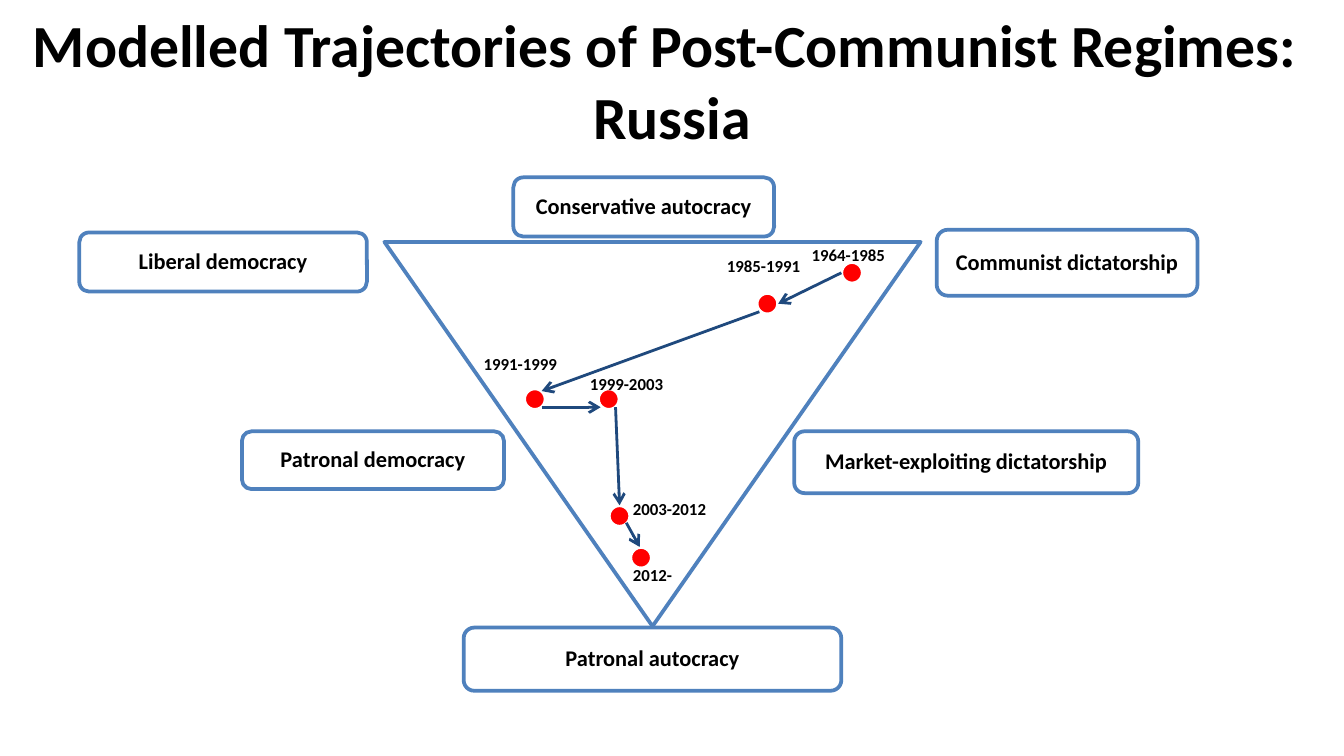
from lxml.etree import SubElement
from pptx import Presentation
from pptx.dml.color import RGBColor
from pptx.enum.shapes import MSO_CONNECTOR, MSO_SHAPE
from pptx.enum.text import MSO_ANCHOR, MSO_AUTO_SIZE, PP_ALIGN
from pptx.oxml.ns import qn
from pptx.util import Inches, Pt

BLACK = RGBColor(0x00, 0x00, 0x00)
WHITE = RGBColor(0xFF, 0xFF, 0xFF)
BLUE = RGBColor(0x4F, 0x81, 0xBD)
NAVY = RGBColor(0x1F, 0x49, 0x7D)
RED = RGBColor(0xFF, 0x00, 0x00)

BOXES = [
    ("Communist dictatorship", 6.97, 1.71, 1.94, 0.49),
    ("Liberal democracy", 0.59, 1.73, 2.14, 0.44),
    ("Patronal autocracy", 3.45, 4.67, 2.81, 0.47),
    ("Conservative autocracy", 3.82, 1.32, 1.94, 0.44),
    ("Market-exploiting dictatorship", 5.91, 3.21, 2.56, 0.46),
    ("Patronal democracy", 1.8, 3.21, 1.95, 0.43),
]
STAGES = [
    ("1964-1985", (6.26, 1.95), (5.94, 1.77)),
    ("1985-1991", (5.63, 2.18), (5.31, 1.85)),
    ("1991-1999", (3.9, 2.89), (3.5, 2.58)),
    ("1999-2003", (4.45, 2.89), (4.29, 2.73)),
    ("2003-2012", (4.53, 3.76), (4.61, 3.66)),
    ("2012-", (4.69, 4.07), (4.61, 4.15)),
]
ARROWS = [
    ((6.26, 2.03), (5.79, 2.26)),
    ((5.65, 2.32), (4.03, 2.91)),
    ((4.03, 3.03), (4.47, 3.03)),
    ((4.58, 3.03), (4.61, 3.76)),
    ((4.66, 3.89), (4.76, 4.07)),
]


def write(frame, text, size=12, align=PP_ALIGN.CENTER, anchor=MSO_ANCHOR.MIDDLE,
          inset=None, space=None, font="Calibri", color=BLACK):
    frame.word_wrap = True
    frame.auto_size = MSO_AUTO_SIZE.NONE
    frame.vertical_anchor = anchor
    if inset is not None:
        frame.margin_left = frame.margin_right = Inches(inset)
        frame.margin_top = frame.margin_bottom = Inches(inset)
    para = frame.paragraphs[0]
    para.text = text
    para.alignment = align
    para.line_spacing = space
    for run in para.runs:
        run.font.name = font
        run.font.size = Pt(size)
        run.font.bold = True
        run.font.color.rgb = color


class Board:
    def __init__(self, slide, edge=BLUE, width=2):
        self.slide = slide
        self.edge = edge
        self.width = width

    def title(self, text, left, top, width, height):
        head = self.slide.shapes.title
        head.left, head.top = Inches(left), Inches(top)
        head.width, head.height = Inches(width), Inches(height)
        write(head.text_frame, text, size=32)

    def shape(self, kind, left, top, width, height, fill=None, edge=None):
        item = self.slide.shapes.add_shape(
            kind, Inches(left), Inches(top), Inches(width), Inches(height))
        item.shadow.inherit = False
        if fill is None:
            item.fill.background()
        else:
            item.fill.solid()
            item.fill.fore_color.rgb = fill
        item.line.color.rgb = edge or self.edge
        item.line.width = Pt(self.width)
        return item

    def field(self, left, top, width, height):
        self.shape(MSO_SHAPE.ISOSCELES_TRIANGLE, left, top, width, height).rotation = 180

    def box(self, text, left, top, width, height):
        item = self.shape(MSO_SHAPE.ROUNDED_RECTANGLE, left, top, width, height, WHITE)
        tint = item._element.spPr.find(qn("a:solidFill"))[0]
        SubElement(tint, qn("a:alpha"), val="90000")
        write(item.text_frame, text, inset=0.05, space=0.9)

    def dot(self, left, top, size=0.16):
        self.shape(MSO_SHAPE.OVAL, left, top, size, size, RED, WHITE)

    def arrow(self, start, end):
        line = self.slide.shapes.add_connector(
            MSO_CONNECTOR.STRAIGHT, *map(Inches, start + end))
        line.line.color.rgb = NAVY
        line.line.width = Pt(1.5)
        props = line._element.spPr
        SubElement(props.find(qn("a:ln")), qn("a:tailEnd"), type="arrow")
        SubElement(props, qn("a:effectLst"))

    def label(self, text, left, top):
        item = self.slide.shapes.add_textbox(
            Inches(left), Inches(top), Inches(1.02), Inches(0.25))
        write(item.text_frame, text, size=9, align=PP_ALIGN.LEFT, anchor=MSO_ANCHOR.TOP)


def main():
    deck = Presentation()
    deck.slide_width, deck.slide_height = Inches(10), Inches(10 * 9 / 16)
    board = Board(deck.slides.add_slide(deck.slide_layouts[5]))
    board.title("Modelled Trajectories of Post-Communist Regimes: \vRussia", 0, 0.21, 10, 0.77)
    board.field(2.86, 1.8, 3.99, 2.86)
    for box in BOXES:
        board.box(*box)
    for _, spot, _ in STAGES:
        board.dot(*spot)
    for start, end in ARROWS:
        board.arrow(start, end)
    for years, _, place in STAGES:
        board.label(years, *place)
    deck.save("out.pptx")


if __name__ == "__main__":
    main()
